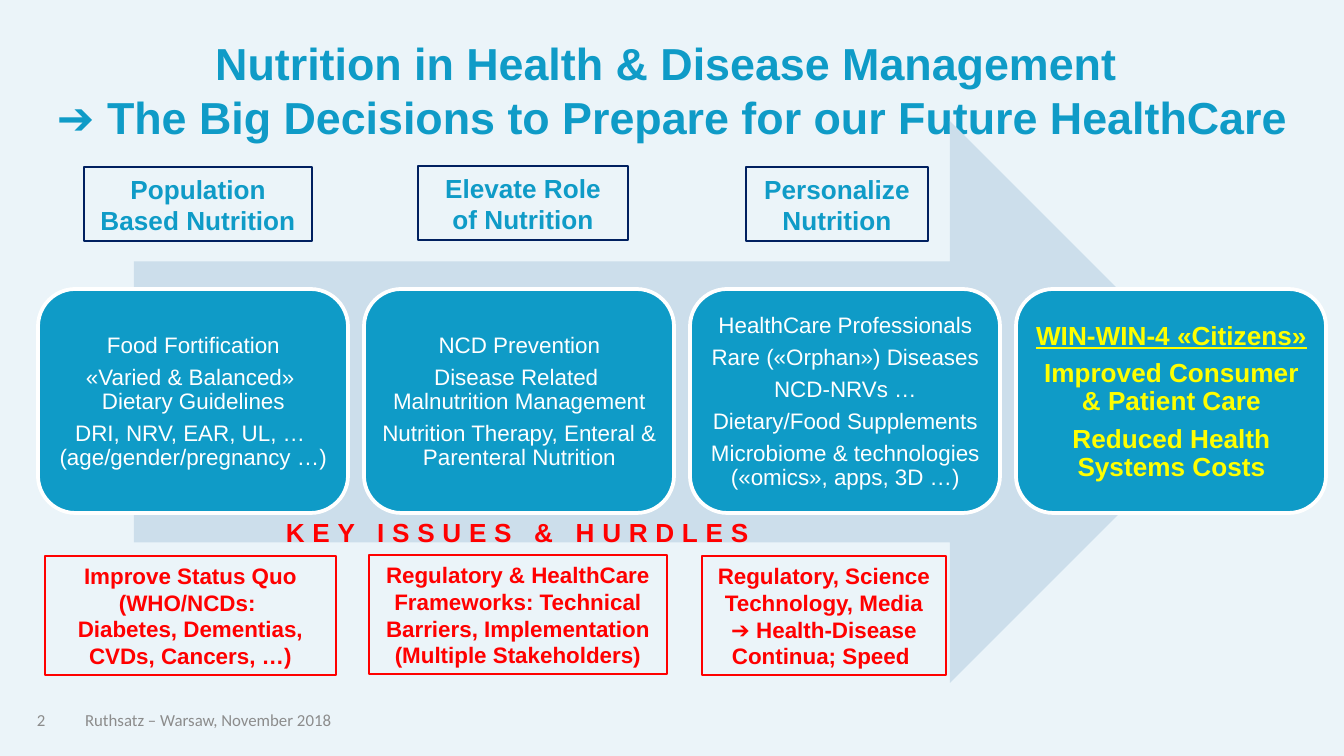
"""Build the nutrition strategy slide with its arrow, cards and framed labels."""
from copy import deepcopy
from dataclasses import dataclass
from typing import Optional

from pptx import Presentation
from pptx.dml.color import RGBColor
from pptx.enum.shapes import MSO_SHAPE
from pptx.enum.text import MSO_ANCHOR, MSO_AUTO_SIZE, PP_ALIGN
from pptx.oxml.ns import qn
from pptx.util import Emu, Pt

EMU_PER_PX = 914400 / 134.4
COLORS = {
    "background": "EBF4F9",
    "blue": "0F9BC7",
    "arrow": "CCDEEB",
    "navy": "002060",
    "red": "FF0000",
    "yellow": "FFFF00",
    "white": "FFFFFF",
    "gray": "8C8C8C",
}
CARD_LEFT, CARD_TOP, CARD_WIDTH, CARD_HEIGHT, CARD_STEP = 38, 289, 310, 224, 326


@dataclass
class Box:
    left: int
    top: int
    width: int
    height: int


@dataclass
class Card:
    text: str
    size: int = 12
    color: str = "white"
    bold: bool = False
    inset: int = 6


@dataclass
class Label:
    box: Box
    text: str
    size: int
    color: str
    line: str
    anchor: MSO_ANCHOR = MSO_ANCHOR.TOP


CARDS = [
    Card("Food Fortification\n«Varied & Balanced» \vDietary Guidelines\n"
         "DRI, NRV, EAR, UL, … \v(age/gender/pregnancy …)"),
    Card("NCD Prevention\nDisease Related \vMalnutrition Management\n"
         "Nutrition Therapy, Enteral & Parenteral Nutrition"),
    Card("HealthCare Professionals\nRare («Orphan») Diseases\nNCD-NRVs …\n"
         "Dietary/Food Supplements\nMicrobiome & technologies («omics», apps, 3D …)"),
    Card("WIN-WIN-4 «Citizens»\nImproved Consumer & Patient Care\n"
         "Reduced Health Systems Costs", 14, "yellow", True, 8),
]
LABELS = [
    Label(Box(84, 167, 228, 74), "Population Based Nutrition", 14, "blue", "navy"),
    Label(Box(418, 166, 210, 74), "Elevate Role of Nutrition", 14, "blue", "navy"),
    Label(Box(746, 167, 182, 74), "Personalize Nutrition", 14, "blue", "navy"),
    Label(Box(45, 556, 291, 119),
          "Improve Status Quo (WHO/NCDs: \vDiabetes, Dementias, CVDs, Cancers, …)",
          12, "red", "red", MSO_ANCHOR.MIDDLE),
    Label(Box(369, 555, 298, 119),
          "Regulatory & HealthCare Frameworks: Technical Barriers, Implementation\n"
          "(Multiple Stakeholders)", 12, "red", "red"),
    Label(Box(702, 556, 244, 119),
          "Regulatory, Science Technology, Media ➔ Health-Disease Continua; Speed ",
          12, "red", "red"),
]


def px(length: int) -> Emu:
    return Emu(round(length * EMU_PER_PX))


def rgb(name: str) -> RGBColor:
    return RGBColor.from_string(COLORS[name])


def place(shape, box: Box) -> None:
    shape.left, shape.top = px(box.left), px(box.top)
    shape.width, shape.height = px(box.width), px(box.height)


def write(shape, text: str, *, size: int, color: str, font: str = "Arial",
          bold: bool = False, align: PP_ALIGN = PP_ALIGN.CENTER,
          anchor: MSO_ANCHOR = MSO_ANCHOR.TOP, inset: tuple[int, int] = (0, 0),
          line_spacing: Optional[float] = None, space_after: float = 0,
          tracking: float = 0) -> None:
    frame = shape.text_frame
    frame.word_wrap = True
    frame.auto_size = MSO_AUTO_SIZE.NONE
    frame.vertical_anchor = anchor
    frame.margin_left = frame.margin_right = px(inset[0])
    frame.margin_top = frame.margin_bottom = px(inset[1])
    for index, line in enumerate(text.split("\n")):
        para = frame.add_paragraph() if index else frame.paragraphs[0]
        para.text = line
        para.alignment = align
        para.space_after = Pt(space_after)
        if line_spacing:
            para.line_spacing = line_spacing
        for span in para.runs:
            span.font.name = font
            span.font.size = Pt(size)
            span.font.bold = bold
            span.font.color.rgb = rgb(color)
            if tracking:
                span.font._element.set("spc", str(round(tracking * 100)))
        for line_break in para._p.findall(qn("a:br")):
            line_break.append(deepcopy(para.runs[0].font._element))


def add_shape(slide, kind: MSO_SHAPE, box: Box, fill: Optional[str] = None,
              line: Optional[str] = None, line_width: float = 0.75):
    shape = slide.shapes.add_shape(kind, 0, 0, 0, 0)
    place(shape, box)
    shape.shadow.inherit = False
    if fill:
        shape.fill.solid()
        shape.fill.fore_color.rgb = rgb(fill)
    else:
        shape.fill.background()
    if line:
        shape.line.color.rgb = rgb(line)
        shape.line.width = Pt(line_width)
    else:
        shape.line.fill.background()
    return shape


def add_text(slide, box: Box, text: str, **style):
    shape = slide.shapes.add_textbox(0, 0, 0, 0)
    place(shape, box)
    write(shape, text, **style)
    return shape


def add_card(slide, card: Card, left: int):
    add_shape(slide, MSO_SHAPE.ROUNDED_RECTANGLE,
              Box(left, CARD_TOP, CARD_WIDTH, CARD_HEIGHT), "blue", "white", 2)
    return add_text(slide, Box(left + 11, CARD_TOP + 12, 289, 203), card.text,
                    size=card.size, color=card.color, bold=card.bold,
                    anchor=MSO_ANCHOR.MIDDLE, inset=(card.inset, card.inset),
                    line_spacing=0.9, space_after=card.size * 0.35)


def add_label(slide, label: Label) -> None:
    shape = add_shape(slide, MSO_SHAPE.RECTANGLE, label.box, line=label.line)
    write(shape, label.text, size=label.size, color=label.color, bold=True,
          anchor=label.anchor, inset=(13, 6))


def main() -> None:
    deck = Presentation()
    deck.slide_width, deck.slide_height = px(1344), px(756)
    slide = deck.slides.add_slide(deck.slide_layouts[5])
    slide.background.fill.solid()
    slide.background.fill.fore_color.rgb = rgb("background")

    title = slide.shapes.title
    place(title, Box(0, 36, 1344, 66))
    write(title, "Nutrition in Health & Disease Management \v"
          "➔ The Big Decisions to Prepare for our Future HealthCare",
          size=24, color="blue", bold=True)

    add_shape(slide, MSO_SHAPE.RIGHT_ARROW, Box(134, 121, 1097, 562), "arrow")
    cards = [add_card(slide, card, CARD_LEFT + index * CARD_STEP)
             for index, card in enumerate(CARDS)]
    cards[-1].text_frame.paragraphs[0].runs[0].font.underline = True
    for label in LABELS:
        add_label(slide, label)

    add_text(slide, Box(273, 510, 510, 43), "KEY ISSUES & HURDLES", size=14,
             color="red", bold=True, align=PP_ALIGN.LEFT, inset=(13, 6), tracking=4.1)
    footer = add_shape(slide, MSO_SHAPE.RECTANGLE, Box(50, 700, 316, 39), "background")
    write(footer, "Ruthsatz – Warsaw, November 2018", size=9, color="gray",
          font="Calibri", anchor=MSO_ANCHOR.MIDDLE, inset=(9, 6))
    add_text(slide, Box(37, 708, 19, 24), "2", size=9, color="gray",
             font="Calibri", align=PP_ALIGN.LEFT, anchor=MSO_ANCHOR.MIDDLE)
    deck.save("out.pptx")


if __name__ == "__main__":
    main()
